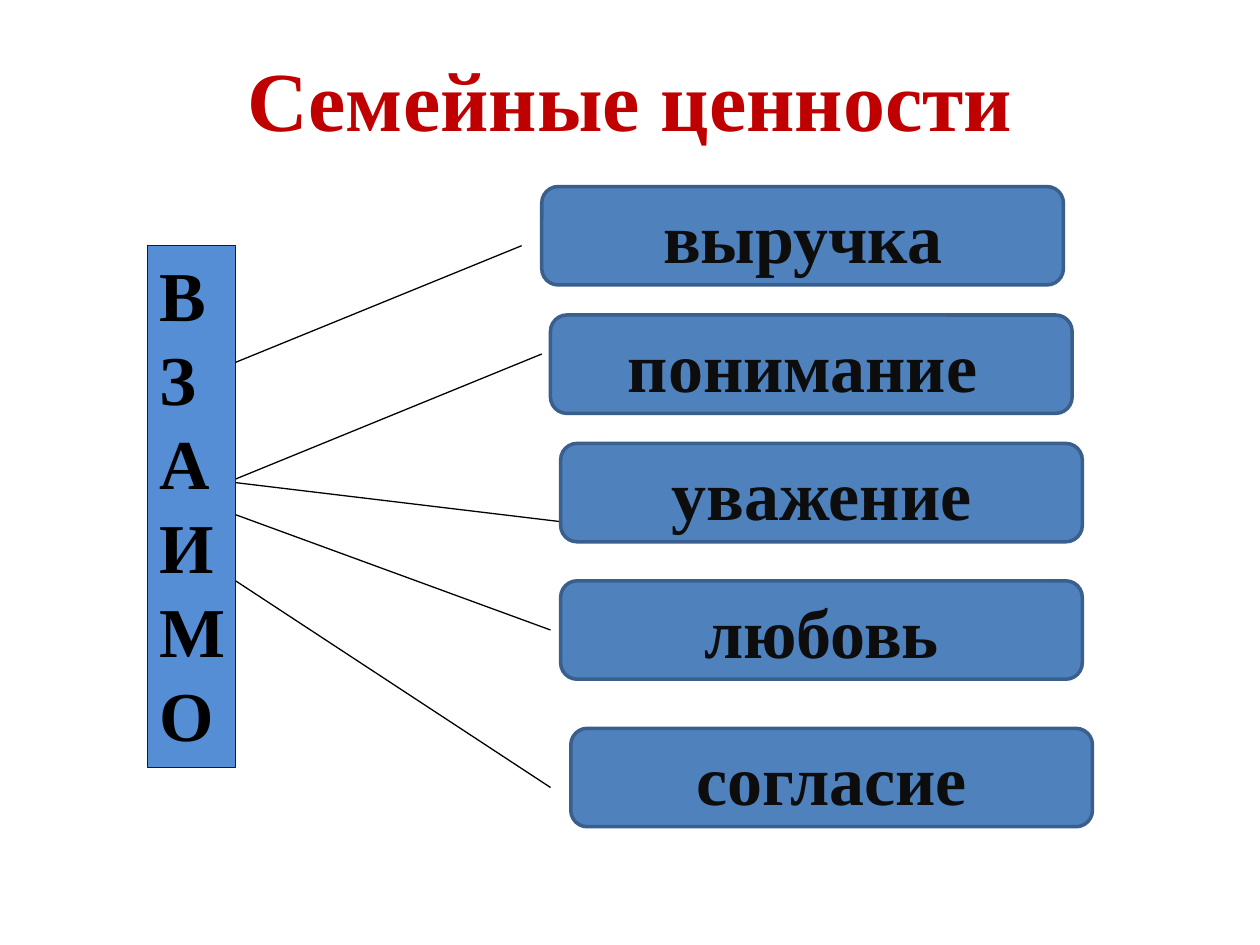
"""Builds a slide that links one shared prefix to five family values."""
from lxml.etree import SubElement
from pptx import Presentation
from pptx.dml.color import RGBColor
from pptx.enum.shapes import MSO_CONNECTOR as CONN, MSO_SHAPE as SHAPE
from pptx.enum.text import MSO_ANCHOR as ANCHOR, PP_ALIGN as ALIGN
from pptx.oxml.ns import qn
from pptx.util import Pt

COLORS = {
    "title": "C00000", "prefix": "558ED5", "prefix_line": "1E1C11",
    "value": "4F81BD", "value_line": "3A5F8C", "value_text": "0D0D0D",
    "black": "000000",
}
VALUES = [
    ("выручка", 309.6, 106.6),
    ("понимание ", 314.6, 180),
    ("уважение", 320.4, 253.4),
    ("любовь", 320.4, 331.9),
    ("согласие", 326.2, 416.2),
]
LINKS = [
    (129.6, 292.3, 314.6, 360),
    (134.6, 275.8, 320.4, 298.1),
    (129.6, 275.8, 309.6, 202.3),
    (118.1, 213.8, 298.1, 140.4),
    (134.6, 331.9, 314.6, 450),
]


def color(name):
    return RGBColor.from_string(COLORS[name])


def write(tf, text, size=40, ink="black", align=ALIGN.LEFT, anchor=ANCHOR.TOP):
    tf.word_wrap = True
    tf.vertical_anchor = anchor
    for i, line in enumerate(text.split("\n")):
        p = tf.add_paragraph() if i else tf.paragraphs[0]
        p.alignment = align
        r = p.add_run()
        r.text = line
        r.font.name = "Times New Roman"
        r.font.size = Pt(size)
        r.font.bold = True
        r.font.color.rgb = color(ink)


class Deck:
    def __init__(self, prs):
        self.slide = prs.slides.add_slide(prs.slide_layouts[5])

    def title(self, text, x, y, w, h):
        sp = self.slide.shapes.title
        sp.left, sp.top, sp.width, sp.height = map(Pt, (x, y, w, h))
        write(sp.text_frame, text, size=48, ink="title", align=ALIGN.CENTER,
              anchor=ANCHOR.MIDDLE)

    def box(self, kind, text, x, y, w, h, fill, line, width, **style):
        sp = self.slide.shapes.add_shape(kind, *map(Pt, (x, y, w, h)))
        sp.shadow.inherit = False
        sp.fill.solid()
        sp.fill.fore_color.rgb = color(fill)
        sp.line.color.rgb = color(line)
        sp.line.width = Pt(width)
        write(sp.text_frame, text, **style)

    def link(self, x1, y1, x2, y2):
        cx = self.slide.shapes.add_connector(
            CONN.STRAIGHT, *map(Pt, (x1, y1, x2, y2)))
        cx.line.color.rgb = color("black")
        cx.line.width = Pt(0.75)
        SubElement(cx._element.spPr, qn("a:effectLst"))


def main():
    prs = Presentation()
    prs.slide_width, prs.slide_height = Pt(720), Pt(540)
    deck = Deck(prs)
    deck.title("Семейные ценности", 36, 16.6, 648, 78.5)
    for ends in LINKS:
        deck.link(*ends)
    deck.box(SHAPE.RECTANGLE, "В\nЗАИМО", 84.2, 140.4, 50.6, 298.1,
             "prefix", "prefix_line", 0.75)
    for text, x, y in VALUES:
        deck.box(SHAPE.ROUNDED_RECTANGLE, text, x, y, 298.1, 56.2,
                 "value", "value_line", 2, ink="value_text",
                 align=ALIGN.CENTER, anchor=ANCHOR.MIDDLE)
    prs.save("out.pptx")


if __name__ == "__main__":
    main()
